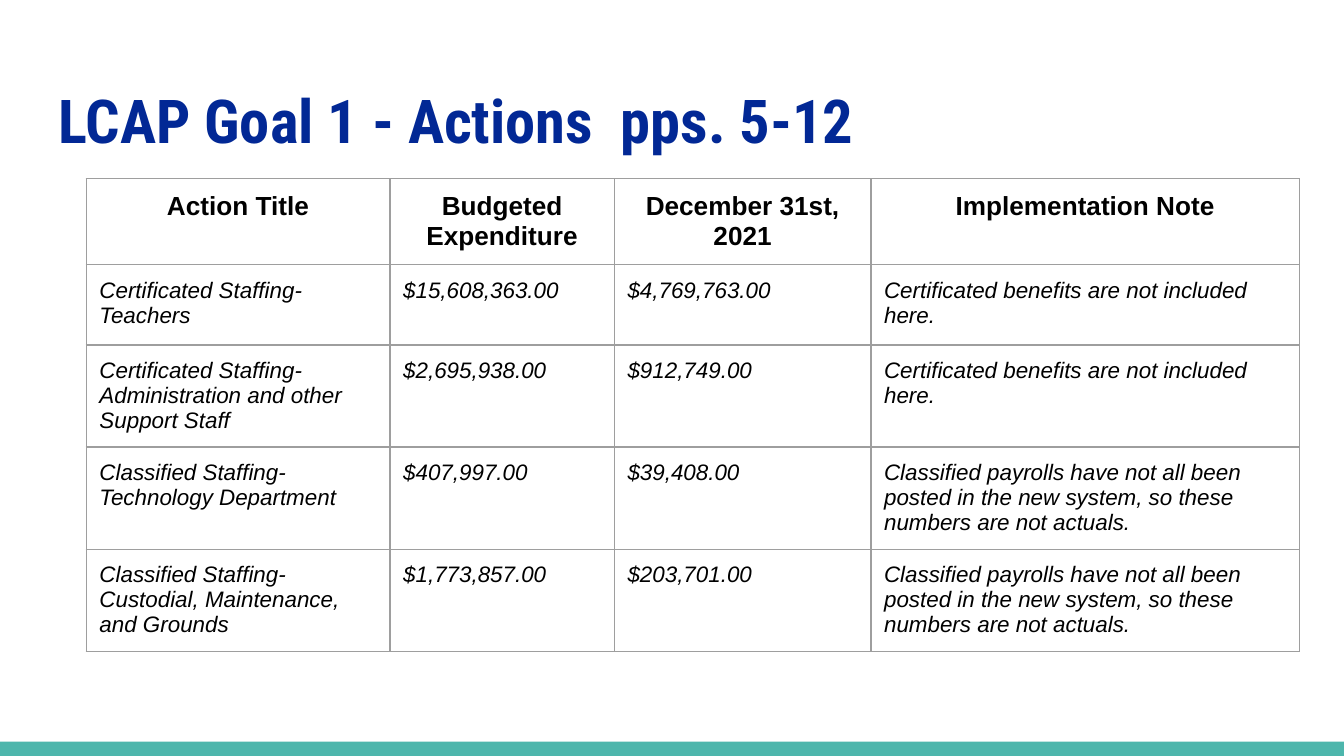
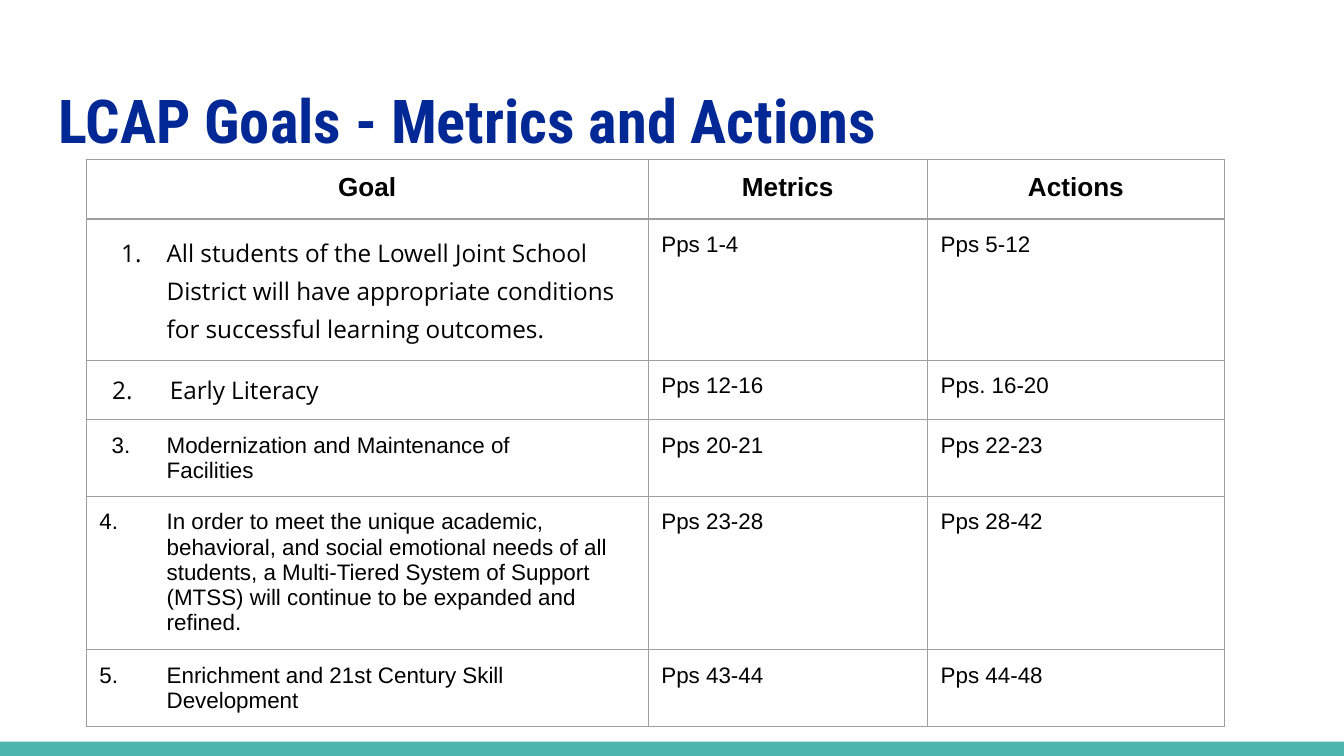
from lxml.etree import SubElement
from pptx import Presentation
from pptx.dml.color import RGBColor
from pptx.enum.shapes import MSO_SHAPE as Shape
from pptx.enum.text import MSO_ANCHOR as Anchor, MSO_AUTO_SIZE as AutoSize, PP_ALIGN as Align
from pptx.oxml.ns import qn
from pptx.util import Cm, Pt

# Shared look
BLUE, TEAL, GREY, BLACK = "022895", "4DB6AC", "9E9E9E", "000000"
WIDTH, HEIGHT, BAND = 25.4, 14.29, 0.27
TABLE_LEFT = 1.63
INSET = Cm(0.25)
TITLE = {"name": "Roboto Condensed", "size": Pt(32.4), "bold": True, "italic": False}
HEAD = {"name": "Arial", "size": Pt(14), "bold": True, "italic": False}
BODY = {"name": "Arial", "size": Pt(12), "bold": False, "italic": False}
NOTE = {**BODY, "italic": True}
GOAL = {**BODY, "name": "Open Sans", "size": Pt(13)}

# Slide contents
NO_BENEFITS = "Certificated benefits are not included here."
NOT_POSTED = ("Classified payrolls have not all been posted in the new system, "
              "so these numbers are not actuals.")
ACTIONS = [
    ("Action Title", "Budgeted Expenditure", "December 31st, 2021", "Implementation Note"),
    ("Certificated Staffing-Teachers", "$15,608,363.00", "$4,769,763.00", NO_BENEFITS),
    ("Certificated Staffing-Administration and other Support Staff",
     "$2,695,938.00", "$912,749.00", NO_BENEFITS),
    ("Classified Staffing-Technology Department", "$407,997.00", "$39,408.00", NOT_POSTED),
    ("Classified Staffing-Custodial, Maintenance, and Grounds",
     "$1,773,857.00", "$203,701.00", NOT_POSTED),
]
GOALS = [
    ("Goal", "Metrics", "Actions"),
    ("All students of the Lowell Joint School District will have appropriate "
     "conditions for successful learning outcomes.", "Pps 1-4", "Pps 5-12"),
    ("Early Literacy", "Pps 12-16", "Pps. 16-20"),
    ("Modernization and Maintenance of\vFacilities", "Pps 20-21", "Pps 22-23"),
    ("In order to meet the unique academic, behavioral, and social emotional needs of "
     "all students, a Multi-Tiered System of Support (MTSS) will continue to be "
     "expanded and refined.", "Pps 23-28", "Pps 28-42"),
    ("Enrichment and 21st Century Skill Development", "Pps 43-44", "Pps 44-48"),
]
# Font, left margin, hanging indent (cm) and line spacing of each goal
GOAL_STYLES = [
    (GOAL, 1.27, 0.86, 1.15),
    (GOAL, 1.33, 1.09, 1),
    (BODY, 1.27, 1.04, 1),
    (BODY, 1.27, 1.27, 1),
    (BODY, 1.27, 1.27, 1),
]


def rgb(value):
    return RGBColor.from_string(value)


def set_attrs(obj, values):
    for key, value in values.items():
        setattr(obj, key, value)


def set_font(p, style, color=BLACK):
    for r in p.runs:
        set_attrs(r.font, style)
        r.font.color.rgb = rgb(color)


def add_band(slide, layout):
    """Draw the bottom band and move it to the layout the slides share."""
    sp = slide.shapes.add_shape(Shape.RECTANGLE, 0, Cm(HEIGHT - BAND), Cm(WIDTH), Cm(BAND))
    sp.shadow.inherit = False
    sp.fill.solid()
    sp.fill.fore_color.rgb = rgb(TEAL)
    sp.line.fill.background()
    layout.shapes.element.append(sp.element)


def add_title(slide, text):
    sp = slide.shapes.title
    set_attrs(sp, {"left": Cm(0.86), "top": Cm(1.24), "width": Cm(23.67), "height": Cm(1.96)})
    tf = sp.text_frame
    tf.text = text
    set_attrs(tf, {"margin_left": INSET, "margin_right": INSET, "margin_top": INSET,
                   "margin_bottom": INSET, "word_wrap": True,
                   "auto_size": AutoSize.NONE, "vertical_anchor": Anchor.BOTTOM})
    p = tf.paragraphs[0]
    set_attrs(p, {"alignment": Align.LEFT, "line_spacing": 1})
    set_font(p, TITLE, BLUE)


def set_borders(cell):
    tc_pr = cell._tc.get_or_add_tcPr()
    for side in ("lnL", "lnR", "lnT", "lnB"):
        ln = SubElement(tc_pr, qn(f"a:{side}"), w=str(Pt(0.75)))
        SubElement(SubElement(ln, qn("a:solidFill")), qn("a:srgbClr"), val=GREY)


def add_table(slide, top, widths, heights, rows, style):
    table = slide.shapes.add_table(
        len(rows), len(widths), Cm(TABLE_LEFT), Cm(top),
        Cm(sum(widths)), Cm(sum(heights))).table
    set_attrs(table, {"first_row": False, "horz_banding": False})
    for col, width in zip(table.columns, widths):
        col.width = Cm(width)
    for i, (row, height, texts) in enumerate(zip(table.rows, heights, rows)):
        row.height = Cm(height)
        for cell, text in zip(row.cells, texts):
            cell.text = text
            set_attrs(cell, {"margin_left": INSET, "margin_right": INSET,
                             "margin_top": INSET, "margin_bottom": INSET})
            set_borders(cell)
            cell.fill.background()
            p = cell.text_frame.paragraphs[0]
            p.alignment = Align.LEFT if i else Align.CENTER
            set_font(p, style if i else HEAD)
    return table


def number_goal(p, number, style, margin, hang, spacing):
    p.line_spacing = spacing
    set_font(p, style)
    p_pr = p._p.get_or_add_pPr()
    p_pr.set("marL", str(Cm(margin)))
    p_pr.set("indent", str(-Cm(hang)))
    SubElement(SubElement(p_pr, qn("a:buClr")), qn("a:srgbClr"), val=BLACK)
    SubElement(p_pr, qn("a:buAutoNum"), type="arabicPeriod", startAt=str(number))


def main():
    prs = Presentation()
    prs.slide_width, prs.slide_height = Cm(WIDTH), Cm(HEIGHT)
    layout = prs.slide_layouts[5]

    # Actions of goal 1
    slide = prs.slides.add_slide(layout)
    add_band(slide, layout)
    add_title(slide, "LCAP Goal 1 - Actions  pps. 5-12")
    add_table(slide, 3.38, [5.74, 4.24, 4.85, 8.1], [1.62, 1.52, 1.93, 1.93, 1.93],
              ACTIONS, NOTE)

    # Overview of all goals
    slide = prs.slides.add_slide(layout)
    add_title(slide, "LCAP Goals - Metrics and Actions")
    table = add_table(slide, 3.02, [10.62, 5.28, 5.61],
                      [1.12, 2.67, 1.12, 1.45, 2.9, 1.45], GOALS, BODY)
    for number, goal_style in enumerate(GOAL_STYLES, 1):
        number_goal(table.cell(number, 0).text_frame.paragraphs[0], number, *goal_style)

    prs.save("out.pptx")


if __name__ == "__main__":
    main()
